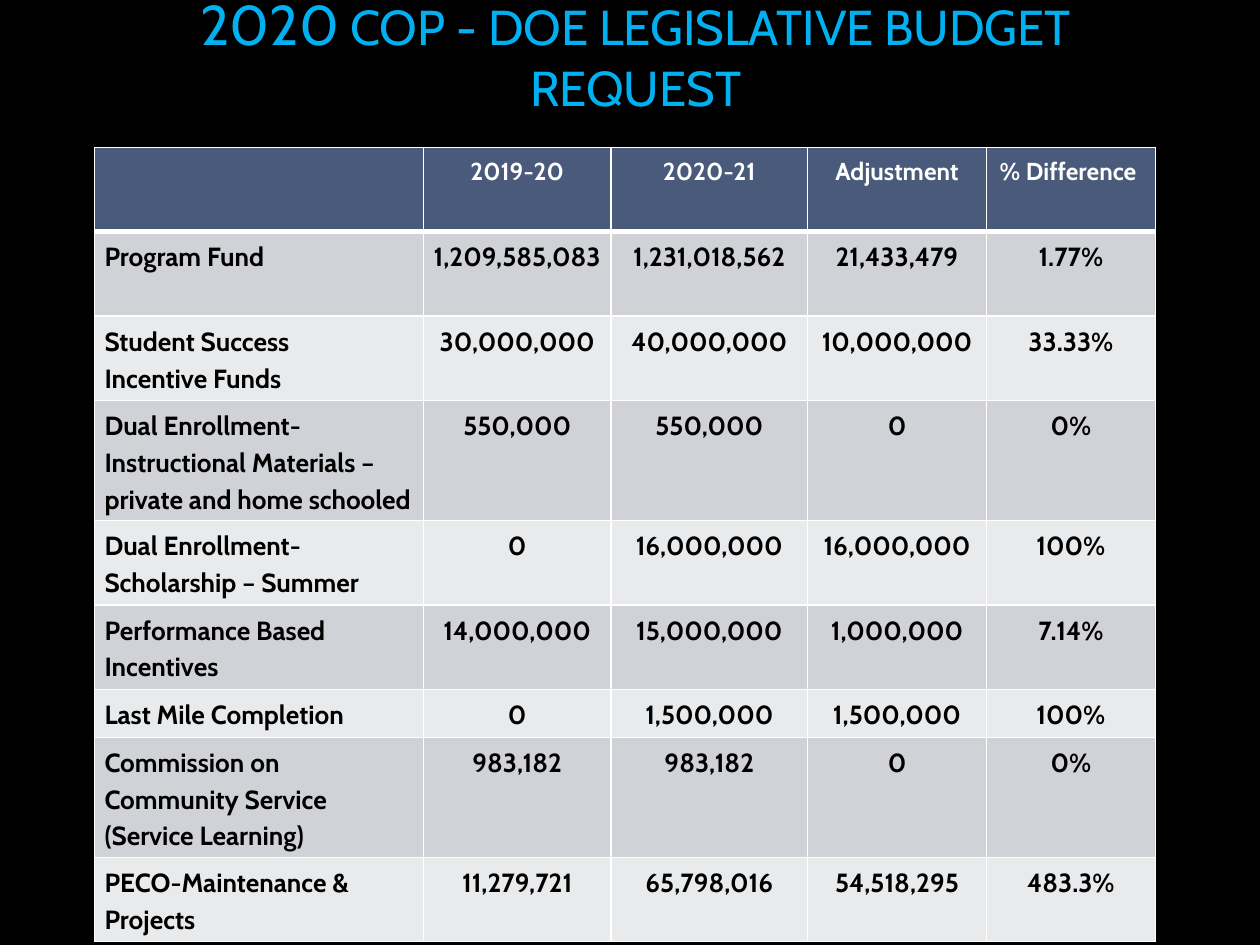
from lxml import etree
from pptx import Presentation
from pptx.dml.color import RGBColor
from pptx.enum.text import MSO_ANCHOR, MSO_AUTO_SIZE, PP_ALIGN
from pptx.oxml.ns import qn
from pptx.util import Inches, Pt

LEFT, CENTER = PP_ALIGN.LEFT, PP_ALIGN.CENTER
BOTTOM = MSO_ANCHOR.BOTTOM
NO_AUTOFIT = MSO_AUTO_SIZE.NONE
TITLE_ONLY = 5

FONT = "Cabin"
BLACK, WHITE, SKY, NAVY = "000000", "FFFFFF", "00B0F0", "4A5A7A"
BANDS = ("D0D2D7", "E9EAEC")

TITLE_RUNS = [("2020", 32), (" COP - DOE LEGISLATIVE BUDGET REQUEST", 28)]
COLUMN_WIDTHS = [2.61, 1.49, 1.56, 1.42, 1.34]
ROW_HEIGHTS = [0.67, 0.67, 0.67, 0.94, 0.67, 0.67, 0.38, 0.94, 0.67]
BUDGET = [
    ["", "2019-20", "2020-21", "Adjustment", "% Difference "],
    ["Program Fund", "1,209,585,083", "1,231,018,562", "21,433,479", "1.77%"],
    ["Student Success\nIncentive Funds", "30,000,000", "40,000,000", "10,000,000", "33.33%"],
    ["Dual Enrollment-Instructional Materials – private and home schooled",
     "550,000", "550,000", "0", "0%"],
    ["Dual Enrollment- Scholarship – Summer", "0", "16,000,000", "16,000,000", "100%"],
    ["Performance Based Incentives", "14,000,000", "15,000,000", "1,000,000", "7.14%"],
    ["Last Mile Completion", "0", "1,500,000", "1,500,000", "100%"],
    ["Commission on Community Service (Service Learning)", "983,182", "983,182", "0", "0%"],
    ["PECO-Maintenance & Projects", "11,279,721", "65,798,016", "54,518,295", "483.3%"],
]


def rgb(color):
    return RGBColor.from_string(color)


def set_font(font, size, color, bold):
    for name, value in {"name": FONT, "size": Pt(size), "bold": bold}.items():
        setattr(font, name, value)
    font.color.rgb = rgb(color)


def set_background(s, color):
    fill = s.background.fill
    fill.solid()
    fill.fore_color.rgb = rgb(color)


def add_title(s, runs):
    sp = s.shapes.title
    box = {"left": 0.63, "top": 0.17, "width": 8.83, "height": 0.8}
    for name, value in box.items():
        setattr(sp, name, Inches(value))
    tf = sp.text_frame
    frame = {"auto_size": NO_AUTOFIT, "word_wrap": True, "vertical_anchor": BOTTOM,
             "margin_left": Inches(0.2), "margin_right": Inches(0.2)}
    for name, value in frame.items():
        setattr(tf, name, value)
    p = tf.paragraphs[0]
    p.alignment = CENTER
    p.space_before = Pt(4)
    for text, size in runs:
        r = p.add_run()
        r.text = text
        set_font(r.font, size, SKY, False)


def set_borders(cell, widths):
    """Draw white borders; widths maps L, R, T and B to points, in that order."""
    props = cell._tc.get_or_add_tcPr()
    for side, width in widths.items():
        line = etree.SubElement(props, qn(f"a:ln{side}"), w=str(Pt(width)))
        fill = etree.SubElement(line, qn("a:solidFill"))
        etree.SubElement(fill, qn("a:srgbClr"), val=WHITE)


def format_cell(cell, text, fill, size, color, align):
    margins = {"margin_left": 0.08, "margin_right": 0.08,
               "margin_top": 0.04, "margin_bottom": 0.04}
    for name, value in margins.items():
        setattr(cell, name, Inches(value))
    cell.fill.solid()
    cell.fill.fore_color.rgb = rgb(fill)
    cell.text = text
    for p in cell.text_frame.paragraphs:
        p.alignment = align
        p.line_spacing = 1.15
        set_font(p.font, size, color, True)
        for r in p.runs:
            set_font(r.font, size, color, True)


def add_budget_table(s, data):
    frame = s.shapes.add_table(len(data), len(COLUMN_WIDTHS), Inches(0.75), Inches(1.17),
                               Inches(sum(COLUMN_WIDTHS)), Inches(sum(ROW_HEIGHTS)))
    table = frame.table
    for column, width in zip(table.columns, COLUMN_WIDTHS):
        column.width = Inches(width)
    for i, (row, height) in enumerate(zip(table.rows, ROW_HEIGHTS)):
        row.height = Inches(height)
        header = i == 0
        fill = NAVY if header else BANDS[(i - 1) % 2]
        size, color = (14, WHITE) if header else (15, BLACK)
        widths = {"L": 1, "R": 1, "T": 3 if i == 1 else 1, "B": 3 if header else 1}
        for j, (cell, text) in enumerate(zip(row.cells, data[i])):
            set_borders(cell, widths)
            format_cell(cell, text, fill, size, color, CENTER if j else LEFT)


def main():
    prs = Presentation()
    prs.slide_width, prs.slide_height = Inches(10), Inches(7.5)
    s = prs.slides.add_slide(prs.slide_layouts[TITLE_ONLY])
    set_background(s, BLACK)
    add_title(s, TITLE_RUNS)
    add_budget_table(s, BUDGET)
    prs.save("out.pptx")


if __name__ == "__main__":
    main()
